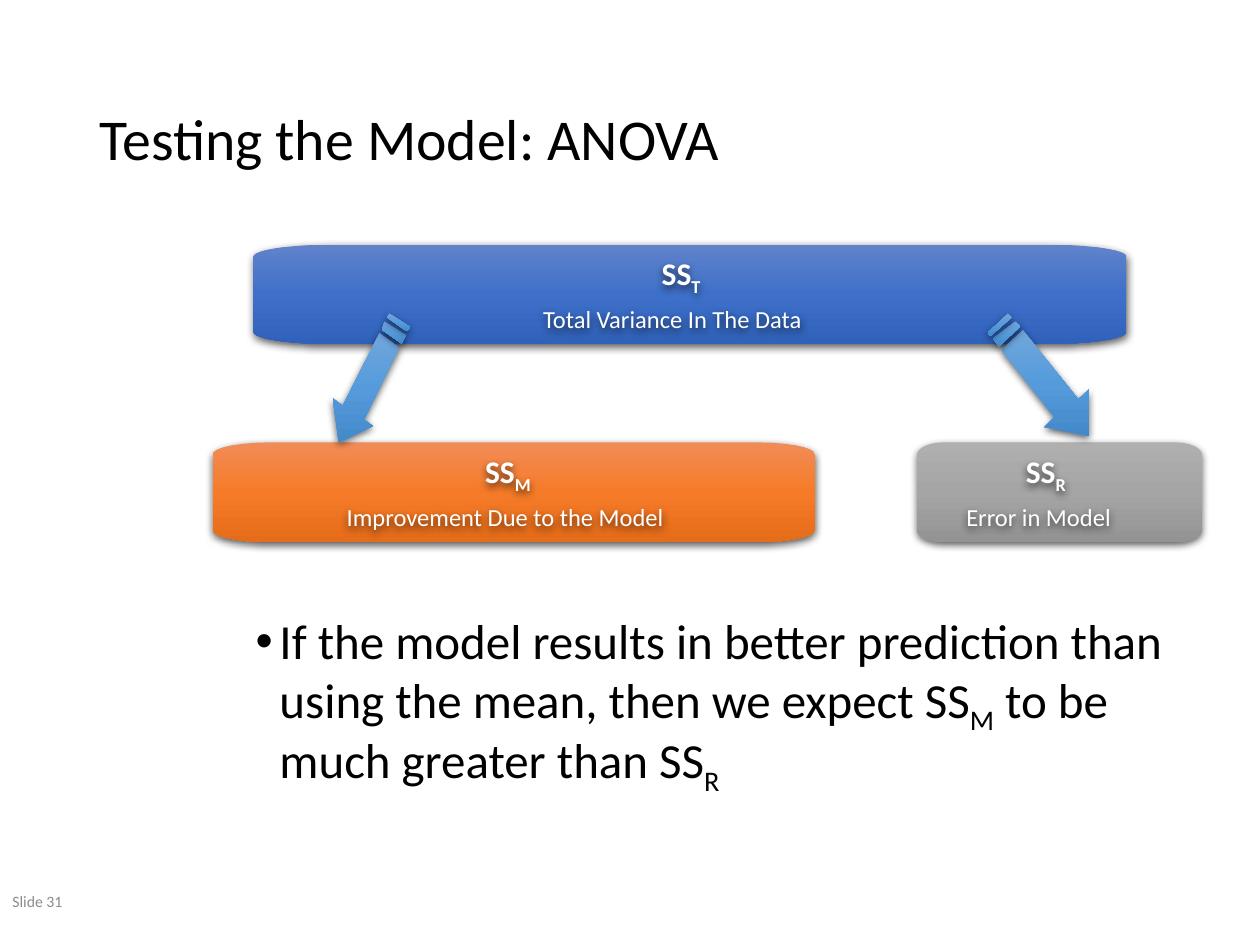
from copy import deepcopy
from math import cos, pi, sin

from lxml.etree import SubElement
from pptx import Presentation
from pptx.dml.color import RGBColor
from pptx.enum.text import MSO_ANCHOR, MSO_AUTO_SIZE, PP_ALIGN
from pptx.oxml.ns import qn
from pptx.util import Cm, Pt

BLACK = RGBColor(0x00, 0x00, 0x00)
WHITE = RGBColor(0xFF, 0xFF, 0xFF)
MUTED = RGBColor(0x8C, 0x8C, 0x8C)
# Gradient colours from top to bottom
BLUE = [RGBColor(0x61, 0x83, 0xCB), RGBColor(0x3E, 0x70, 0xCA), RGBColor(0x30, 0x62, 0xBB)]
ORANGE = [RGBColor(0xF1, 0x8C, 0x57), RGBColor(0xF6, 0x7B, 0x28), RGBColor(0xE5, 0x6C, 0x19)]
GRAY = [RGBColor(0xAF, 0xAF, 0xAF), RGBColor(0xA5, 0xA5, 0xA5), RGBColor(0x93, 0x93, 0x93)]
SKY = [RGBColor(0x71, 0xA6, 0xDB), RGBColor(0x55, 0x9B, 0xDB), RGBColor(0x44, 0x8A, 0xCA)]


class Deck:
    font = "Calibri"
    box_high = 2.01
    round_x = 0.094  # corner width as a share of the box width
    round_y = 0.25

    def __init__(self):
        self.prs = Presentation()
        self.prs.slide_width, self.prs.slide_height = Cm(25.4), Cm(19.05)
        self.slide = self.prs.slides.add_slide(self.prs.slide_layouts[1])

    def place(self, shape, left, top, width, height):
        shape.left, shape.top = Cm(left), Cm(top)
        shape.width, shape.height = Cm(width), Cm(height)

    def add_runs(self, para, parts, size, color, bold=False):
        """Add runs; every second part is a subscript."""
        for i, part in enumerate(parts):
            run = para.add_run()
            run.text = part
            font = run.font
            font.name, font.size, font.bold = self.font, Pt(size), bold
            font.color.rgb = color
            if i % 2:
                run._r.get_or_add_rPr().set("baseline", "-25000")

    def shade(self, shape):
        shape.shadow.inherit = False
        effect = shape._element.spPr.find(qn("a:effectLst"))
        outer = SubElement(effect, qn("a:outerShdw"), blurRad=str(Pt(4.5)),
                           dist=str(Pt(1.5)), dir="5400000", rotWithShape="0")
        black = SubElement(outer, qn("a:srgbClr"), val=str(BLACK))
        SubElement(black, qn("a:alpha"), val="63000")

    def title(self, text):
        shape = self.slide.shapes.title
        self.place(shape, 1.75, 1.02, 21.89, 3.68)
        shape.text_frame.vertical_anchor = MSO_ANCHOR.MIDDLE
        para = shape.text_frame.paragraphs[0]
        para.alignment, para.line_spacing = PP_ALIGN.LEFT, 0.9
        self.add_runs(para, [text], 33, BLACK)

    def body(self, parts):
        shape = self.slide.placeholders[1]
        self.place(shape, 4.9, 12.32, 19.23, 4.7)
        para = shape.text_frame.paragraphs[0]
        para.line_spacing, para.space_before = 0.9, Pt(7.5)
        props = para._p.get_or_add_pPr()
        props.set("marL", str(Cm(0.48)))
        props.set("indent", str(Cm(-0.48)))
        SubElement(props, qn("a:buChar"), char="•")
        self.add_runs(para, parts, 28, BLACK)

    def label(self, left, top, width, height, parts, size, bold=False):
        shape = self.slide.shapes.add_textbox(Cm(left), Cm(top), Cm(width), Cm(height))
        frame = shape.text_frame
        frame.margin_left = frame.margin_right = 0
        frame.margin_top = frame.margin_bottom = 0
        frame.word_wrap, frame.auto_size = False, MSO_AUTO_SIZE.SHAPE_TO_FIT_TEXT
        self.add_runs(frame.paragraphs[0], parts, size, WHITE, bold)
        self.shade(shape)

    def footer(self, text):
        shape = self.slide.shapes.add_textbox(0, Cm(17.65), Cm(2.39), Cm(1.02))
        frame = shape.text_frame
        frame.word_wrap, frame.vertical_anchor = True, MSO_ANCHOR.MIDDLE
        self.add_runs(frame.paragraphs[0], [text], 9, MUTED)

    def outline(self, points, colors):
        first, *rest = [(Cm(x), Cm(y)) for x, y in points]
        pen = self.slide.shapes.build_freeform(*first)
        pen.add_line_segments(rest, close=True)
        shape = pen.convert_to_shape()
        shape.line.fill.background()
        fill = shape.fill
        fill.gradient()
        fill.gradient_angle = 270
        stops = shape._element.spPr.find(qn("a:gradFill")).find(qn("a:gsLst"))
        stops.insert(1, deepcopy(stops[0]))
        for i, (stop, color) in enumerate(zip(fill.gradient_stops, colors)):
            stop.position, stop.color.rgb = i / 2, color
        self.shade(shape)

    def box(self, left, top, width, colors, sub, sub_at, text, text_at):
        """Box with stretched round corners, a symbol and a caption."""
        rx, ry = self.round_x * width, self.round_y
        right, low = left + width - rx, top + self.box_high - ry
        hubs = [(right, low), (left + rx, low), (left + rx, top + ry), (right, top + ry)]
        points = []
        for turn, (x, y) in enumerate(hubs):
            for step in range(13):
                angle = (turn + step / 12) * pi / 2
                points.append((x + rx * cos(angle), y + ry * sin(angle)))
        self.outline(points, colors)
        self.label(sub_at[0], top + 0.2, sub_at[1], 0.76, ["SS", sub], 18, True)
        self.label(text_at[0], top + 1.2, text_at[1], 0.58, [text], 14)

    def arrow(self, *parts):
        for points in parts:
            self.outline(points, SKY)


def main():
    deck = Deck()

    # Title, list and slide number
    deck.title("Testing the Model: ANOVA")
    deck.body(["If the model results in better prediction than using the mean, "
               "then we expect SS", "M", " to be much greater than SS", "R"])
    deck.footer("Slide 31")

    # Variance boxes; each label has its left edge and width
    deck.box(18.49, 8.92, 5.74, GRAY, "R", (20.68, 1.14),
             "Error in Model", (19.48, 3.1))
    deck.box(4.29, 8.92, 12.14, ORANGE, "M", (9.78, 1.19),
             "Improvement Due to the Model", (6.99, 6.76))
    deck.box(5.11, 4.93, 17.6, BLUE, "T", (13.34, 1.12),
             "Total Variance In The Data", (10.95, 5.89))

    # Striped arrows: head with shaft, then two stripes
    deck.arrow(
        [(7.52, 8.59), (7.34, 8.46), (8.05, 7.01), (7.65, 6.71),
         (6.91, 8.18), (6.71, 8.03), (6.83, 8.92)],
        [(8.18, 6.76), (7.75, 6.48), (7.7, 6.65), (8.1, 6.93)],
        [(8.28, 6.6), (7.85, 6.32), (7.8, 6.4), (8.2, 6.68)])
    deck.arrow(
        [(21.95, 7.85), (21.74, 8.05), (20.62, 6.65), (20.19, 7.06),
         (21.26, 8.41), (21.06, 8.61), (21.95, 8.79)],
        [(20.47, 6.48), (20.02, 6.83), (20.14, 6.99), (20.57, 6.58)],
        [(20.32, 6.32), (19.91, 6.71), (19.96, 6.78), (20.4, 6.4)])

    deck.prs.save("out.pptx")


if __name__ == "__main__":
    main()
